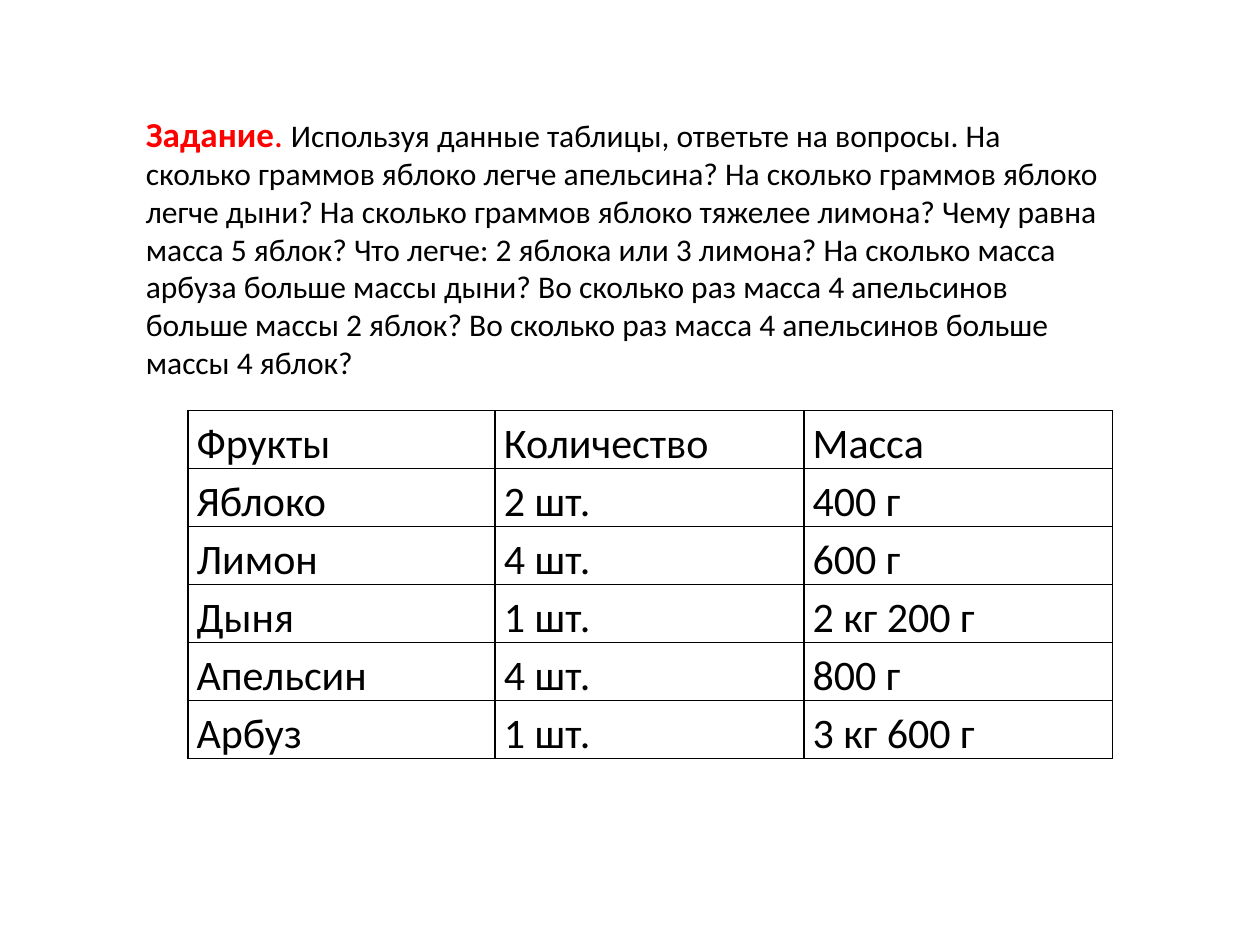
from lxml.etree import SubElement
from pptx import Presentation
from pptx.dml.color import RGBColor
from pptx.enum.text import MSO_AUTO_SIZE as AutoSize
from pptx.oxml.ns import qn
from pptx.util import Inches, Pt

TASK = [
    ("Задание", {"size": Pt(20), "bold": True}, "FF0000"),
    (". ", {"size": Pt(20), "bold": False}, "FF0000"),
    ("Используя данные таблицы, ответьте на вопросы. "
     "На сколько граммов яблоко легче апельсина? "
     "На сколько граммов яблоко легче дыни? "
     "На сколько граммов яблоко тяжелее лимона? "
     "Чему равна масса 5 яблок? "
     "Что легче: 2 яблока или 3 лимона? "
     "На сколько масса арбуза больше массы дыни? "
     "Во сколько раз масса 4 апельсинов больше массы 2 яблок? "
     "Во сколько раз масса 4 апельсинов больше массы 4 яблок?",
     {"size": Pt(18), "bold": False}, "000000"),
]
FRUITS = [
    ("Фрукты", "Количество", "Масса"),
    ("Яблоко", "2 шт.", "400 г"),
    ("Лимон", "4 шт.", "600 г"),
    ("Дыня", "1 шт.", "2 кг 200 г"),
    ("Апельсин", "4 шт.", "800 г"),
    ("Арбуз", "1 шт.", "3 кг 600 г"),
]
COLUMN_WIDTHS = [2.44, 2.45, 2.45]
ROW_HEIGHT = 0.46
CELL_FORMAT = {"margin_left": Inches(0.07), "margin_right": Inches(0.07),
               "margin_top": 0, "margin_bottom": 0}
CELL_FONT = {"size": Pt(24), "bold": False}
BORDER_SIDES = ("a:lnL", "a:lnR", "a:lnT", "a:lnB")


def rgb(hex_color):
    return RGBColor.from_string(hex_color)


def apply(target, values):
    for name, value in values.items():
        setattr(target, name, value)


def add_run(paragraph, text, font, color):
    run = paragraph.add_run()
    run.text = text
    apply(run.font, {"name": "Calibri", **font})
    run.font.color.rgb = rgb(color)


def add_borders(cell, color, width):
    properties = cell._tc.get_or_add_tcPr()
    for side in BORDER_SIDES:
        border = SubElement(properties, qn(side), w=str(width))
        fill = SubElement(border, qn("a:solidFill"))
        SubElement(fill, qn("a:srgbClr"), val=color)


def add_task(slide):
    box = slide.shapes.add_textbox(Inches(1.06), Inches(0.84), Inches(7.8), Inches(2.26))
    apply(box.text_frame, {"word_wrap": True, "auto_size": AutoSize.SHAPE_TO_FIT_TEXT})
    for text, font, color in TASK:
        add_run(box.text_frame.paragraphs[0], text, font, color)


def add_fruits(slide):
    table = slide.shapes.add_table(
        len(FRUITS), len(COLUMN_WIDTHS), Inches(1.49), Inches(3.26),
        Inches(sum(COLUMN_WIDTHS)), Inches(ROW_HEIGHT * len(FRUITS))).table
    apply(table, {"first_row": False, "horz_banding": False})
    for column, width in zip(table.columns, COLUMN_WIDTHS):
        column.width = Inches(width)
    for row, values in zip(table.rows, FRUITS):
        row.height = Inches(ROW_HEIGHT)
        for cell, value in zip(row.cells, values):
            apply(cell, CELL_FORMAT)
            add_borders(cell, "000000", Pt(1))
            cell.fill.background()
            paragraph = cell.text_frame.paragraphs[0]
            paragraph.line_spacing = 1.15
            add_run(paragraph, value, CELL_FONT, "000000")


def main():
    deck = Presentation()
    apply(deck, {"slide_width": Inches(10), "slide_height": Inches(7.5)})
    slide = deck.slides.add_slide(deck.slide_layouts[6])
    add_task(slide)
    add_fruits(slide)
    deck.save("out.pptx")


if __name__ == "__main__":
    main()
